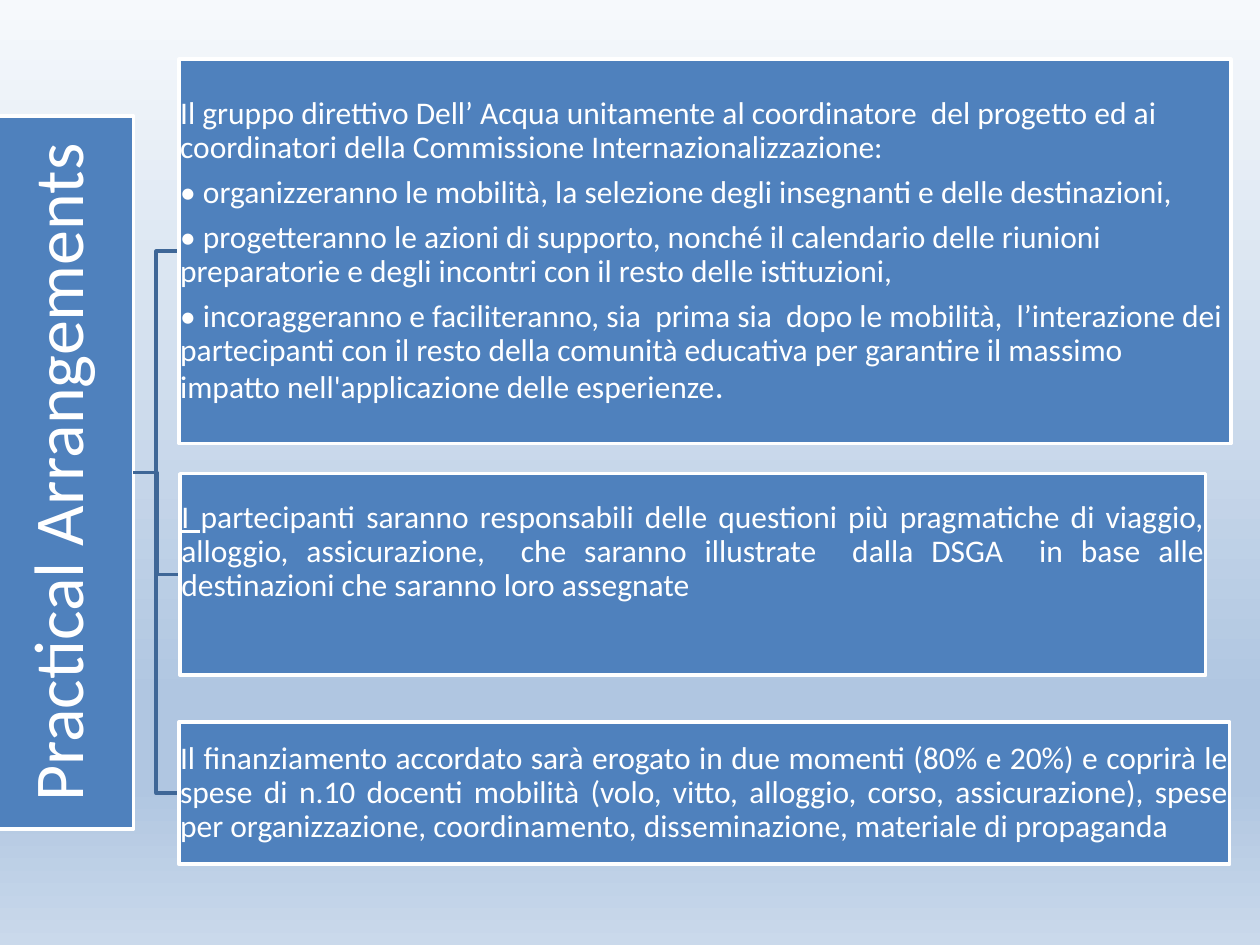
from lxml.etree import SubElement
from pptx import Presentation
from pptx.dml.color import RGBColor
from pptx.enum.shapes import MSO_CONNECTOR as Connector, MSO_SHAPE as Preset
from pptx.enum.text import MSO_ANCHOR as Anchor, MSO_AUTO_SIZE as AutoSize, PP_ALIGN as Align
from pptx.oxml.ns import qn
from pptx.util import Inches, Pt

COLORS = {"box": "4F81BD", "edge": "FFFFFF", "text": "FFFFFF", "branch": "3F6797"}
BACKGROUND_STOPS = [(0, "F6F9FC"), (74, "B0C6E1"), (83, "B0C6E1"), (100, "CAD9EB")]
WIDTH, HEIGHT = Inches(10), Inches(7.5)
COLUMN, ROW = WIDTH / 100, HEIGHT / 75
FONT = "Calibri"
BODY_SIZE = 18

TITLE_BOX = (-1, 9.2, 11.6, 56.6)
TOPICS = [
    {
        "box": (14.2, 4.7, 83.5, 30.5),
        "align": Align.LEFT,
        "paragraphs": [
            [("Il gruppo direttivo Dell’ Acqua unitamente al coordinatore  del progetto ed ai  "
              "coordinatori della Commissione Internazionalizzazione:", {})],
            [("• organizzeranno le mobilità, la selezione degli insegnanti e delle destinazioni,", {})],
            [("• progetteranno le azioni di supporto, nonché il calendario delle riunioni "
              "preparatorie e degli incontri con il resto delle istituzioni,", {})],
            [("• incoraggeranno e faciliteranno, sia  prima sia  dopo le mobilità,  l’interazione dei "
              "partecipanti con il resto della comunità educativa per garantire il massimo "
              "impatto nell'applicazione delle esperienze", {}), (".", {"size": Pt(20)})],
        ],
    },
    {
        "box": (14.3, 37.6, 81.4, 16),
        "align": Align.JUSTIFY,
        "bottom_rows": 3.7,
        "paragraphs": [
            [("I ", {"underline": True}),
             ("partecipanti saranno responsabili delle questioni più pragmatiche di viaggio, "
              "alloggio, assicurazione,  che saranno illustrate  dalla DSGA  in base alle "
              "destinazioni che saranno loro assegnate", {})],
        ],
    },
    {
        "box": (14.2, 57.3, 83.4, 11.3),
        "align": Align.JUSTIFY,
        "paragraphs": [
            [("Il finanziamento accordato sarà erogato in due momenti (80% e 20%) e coprirà le "
              "spese di n.10 docenti mobilità (volo, vitto, alloggio, corso, assicurazione), spese "
              "per organizzazione, coordinamento, disseminazione, materiale di propaganda", {})],
        ],
    },
]


def color(name):
    return RGBColor.from_string(COLORS[name])


def to_lengths(box):
    left, top, width, height = box
    return [int(n) for n in (left * COLUMN, top * ROW, width * COLUMN, height * ROW)]


def paint_background(slide):
    fill = slide.background.fill
    fill.gradient()
    fill.gradient_angle = 270
    stops = slide.element.find(".//" + qn("a:gsLst"))
    for stop in list(stops):
        stops.remove(stop)
    for percent, value in BACKGROUND_STOPS:
        stop = SubElement(stops, qn("a:gs"), pos=str(percent * 1000))
        SubElement(stop, qn("a:srgbClr"), val=value)


def style_box(shape, margin):
    shape.fill.solid()
    shape.fill.fore_color.rgb = color("box")
    shape.line.color.rgb = color("edge")
    shape.line.width = Pt(2)
    shape.shadow.inherit = False
    frame = shape.text_frame
    frame.word_wrap = True
    frame.auto_size = AutoSize.NONE
    frame.vertical_anchor = Anchor.MIDDLE
    frame.margin_left = frame.margin_right = Inches(margin)
    frame.margin_top = frame.margin_bottom = Inches(margin)


def style_paragraph(paragraph, size, align):
    paragraph.alignment = align
    paragraph.line_spacing = 0.9
    paragraph.space_after = Pt(size * 0.35)
    paragraph.font.name = FONT
    paragraph.font.size = Pt(size)
    paragraph.font.color.rgb = color("text")


def place_title(slide, box, text):
    left, top, width, height = to_lengths(box)
    title = slide.shapes.title
    title.left, title.top = left + (width - height) // 2, top + (height - width) // 2
    title.width, title.height = height, width
    title.rotation = 270
    style_box(title, 0.03)
    title.text_frame.text = text
    style_paragraph(title.text_frame.paragraphs[0], 40, Align.CENTER)


def add_branch(slide, start_box, end_box):
    left, top, width, height = to_lengths(start_box)
    end_left, end_top, _, end_height = to_lengths(end_box)
    branch = slide.shapes.add_connector(
        Connector.ELBOW, left + width, top + height // 2, end_left, end_top + end_height // 2)
    branch.line.color.rgb = color("branch")
    branch.line.width = Pt(2)
    SubElement(branch.element.spPr, qn("a:effectLst"))


def add_topic(slide, topic):
    shape = slide.shapes.add_shape(Preset.RECTANGLE, *to_lengths(topic["box"]))
    style_box(shape, 0.01)
    frame = shape.text_frame
    if "bottom_rows" in topic:
        frame.margin_bottom = int(topic["bottom_rows"] * ROW)
    for index, runs in enumerate(topic["paragraphs"]):
        paragraph = frame.add_paragraph() if index else frame.paragraphs[0]
        style_paragraph(paragraph, BODY_SIZE, topic["align"])
        for text, changes in runs:
            run = paragraph.add_run()
            run.text = text
            for name, value in changes.items():
                setattr(run.font, name, value)


def main():
    presentation = Presentation()
    presentation.slide_width, presentation.slide_height = WIDTH, HEIGHT
    slide = presentation.slides.add_slide(presentation.slide_layouts.get_by_name("Title Only"))
    paint_background(slide)
    place_title(slide, TITLE_BOX, "Practical Arrangements")
    for topic in TOPICS:
        add_branch(slide, TITLE_BOX, topic["box"])
    for topic in TOPICS:
        add_topic(slide, topic)
    presentation.save("out.pptx")


if __name__ == "__main__":
    main()
